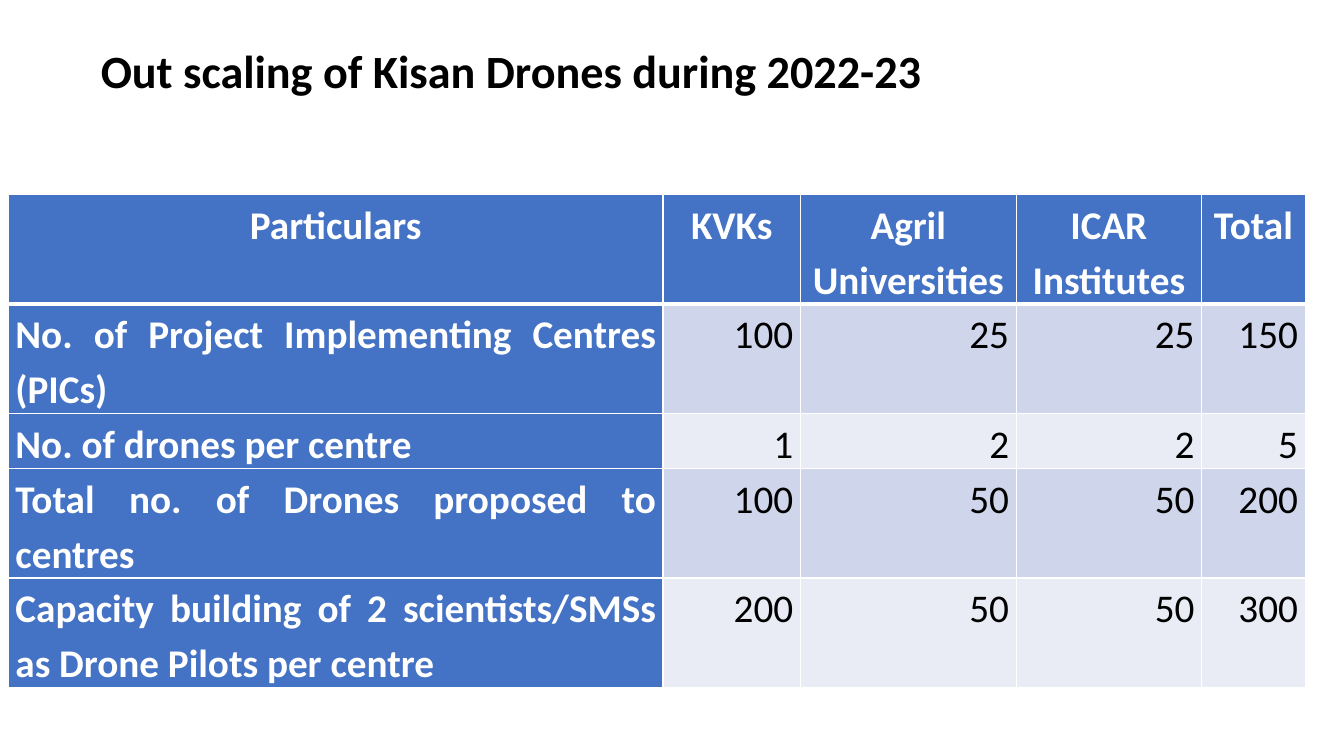
import lxml.etree
import pptx
import pptx.dml.color
import pptx.enum.text
import pptx.oxml.ns
import pptx.util

Cm = pptx.util.Cm
Pt = pptx.util.Pt
ALIGN = pptx.enum.text.PP_ALIGN
ANCHOR = pptx.enum.text.MSO_ANCHOR

COLORS = {
    "white": "FFFFFF",
    "black": "000000",
    "blue": "4472C4",
    "odd_row": "CFD5EA",
    "even_row": "E9EBF5",
}
HEADERS = ["Particulars", "KVKs", "Agril Universities", "ICAR Institutes", "Total"]
DRONE_ROWS = [
    ["No. of Project Implementing Centres (PICs)", 100, 25, 25, 150],
    ["No. of drones per centre", 1, 2, 2, 5],
    ["Total no. of Drones proposed to centres", 100, 50, 50, 200],
    ["Capacity building of 2 scientists/SMSs as Drone Pilots per centre", 200, 50, 50, 300],
]
COLUMN_WIDTHS = [16.5, 3.46, 5.44, 4.67, 2.61]
LINES_PER_ROW = [2, 2, 1, 2, 2]
LINE_HEIGHT = 1.38


def set_attributes(target, values):
    for name, value in values.items():
        setattr(target, name, value)


def rgb(color):
    return pptx.dml.color.RGBColor.from_string(COLORS[color])


class SlideBuilder:
    font = "Calibri"

    def __init__(self, slide):
        self.slide = slide

    def add_text(self, frame, text, size, color, bold, paragraph_format):
        paragraph = frame.paragraphs[0]
        set_attributes(paragraph, paragraph_format)
        run = paragraph.add_run()
        run.text = text
        set_attributes(run.font, {"name": self.font, "size": Pt(size), "bold": bold})
        run.font.color.rgb = rgb(color)

    def title(self, text, left, top, width, height):
        shape = self.slide.shapes.add_textbox(Cm(left), Cm(top), Cm(width), Cm(height))
        set_attributes(shape.text_frame, {"word_wrap": True, "vertical_anchor": ANCHOR.MIDDLE})
        self.add_text(shape.text_frame, text, 33, "black", True, {"line_spacing": 0.9})

    def borders(self, cell, widths):
        properties = cell._tc.get_or_add_tcPr()
        for side, width in widths.items():
            line = lxml.etree.SubElement(
                properties, pptx.oxml.ns.qn(f"a:ln{side}"), w=str(Pt(width))
            )
            fill = lxml.etree.SubElement(line, pptx.oxml.ns.qn("a:solidFill"))
            lxml.etree.SubElement(fill, pptx.oxml.ns.qn("a:srgbClr"), val=COLORS["white"])

    def cell(self, cell, text, row, column):
        is_header, is_label = row == 0, column == 0
        emphasized = is_header or is_label
        self.borders(cell, {"L": 1, "R": 1, "T": 3 if row == 1 else 1, "B": 3 if is_header else 1})
        cell.fill.solid()
        cell.fill.fore_color.rgb = rgb("blue" if emphasized else "odd_row" if row % 2 else "even_row")
        set_attributes(cell, {
            "margin_left": Cm(0.18),
            "margin_right": Cm(0.18),
            "margin_top": 0,
            "margin_bottom": 0,
            "vertical_anchor": ANCHOR.BOTTOM if is_label and not is_header else ANCHOR.TOP,
        })
        alignment = ALIGN.CENTER if is_header else ALIGN.JUSTIFY if is_label else ALIGN.RIGHT
        self.add_text(cell.text_frame, text, 28, "white" if emphasized else "black", emphasized,
                      {"alignment": alignment, "line_spacing": 1.15})

    def table(self, rows, left, top, column_widths, row_heights):
        shape = self.slide.shapes.add_table(
            len(rows), len(column_widths), Cm(left), Cm(top),
            Cm(sum(column_widths)), Cm(sum(row_heights)),
        )
        table = shape.table
        for column, width in zip(table.columns, column_widths):
            column.width = Cm(width)
        for row, height in zip(table.rows, row_heights):
            row.height = Cm(height)
        for row, values in enumerate(rows):
            for column, value in enumerate(values):
                self.cell(table.cell(row, column), str(value), row, column)


def main():
    presentation = pptx.Presentation()
    set_attributes(presentation, {"slide_width": Cm(33.87), "slide_height": Cm(19.05)})
    slide = presentation.slides.add_slide(presentation.slide_layouts[6])
    builder = SlideBuilder(slide)
    builder.title("Out scaling of Kisan Drones during 2022-23", 2.29, 1.07, 29.21, 1.55)
    row_heights = [lines * LINE_HEIGHT for lines in LINES_PER_ROW]
    builder.table([HEADERS] + DRONE_ROWS, 0.21, 4.91, COLUMN_WIDTHS, row_heights)
    presentation.save("out.pptx")


if __name__ == "__main__":
    main()
